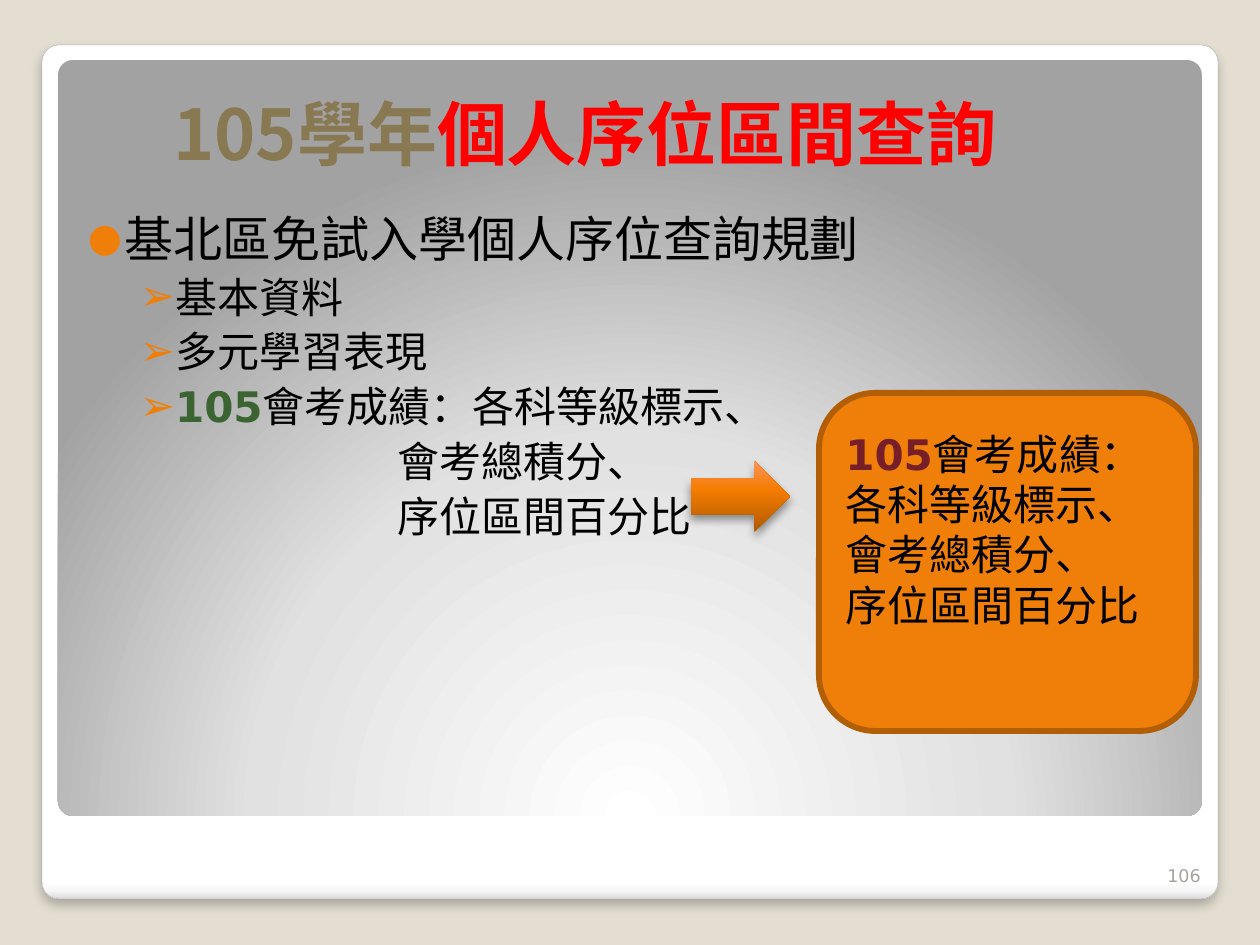
from dataclasses import dataclass

from lxml.etree import SubElement
from pptx import Presentation
from pptx.dml.color import RGBColor
from pptx.enum.shapes import MSO_SHAPE
from pptx.enum.text import MSO_ANCHOR, PP_ALIGN
from pptx.oxml.ns import qn
from pptx.util import Emu, Pt

PX = 914400 / 126


@dataclass(frozen=True)
class Theme:
    backdrop: str = "E3DED1"
    accent: str = "F07F09"
    accent_edge: str = "B25E07"
    card_edge: str = "A4A4A4"
    title: str = "887952"
    alert: str = "FF0000"
    text: str = "000000"
    green: str = "3B6432"
    maroon: str = "771F28"
    page: str = "A8A49B"
    title_size: int = 40
    topic_size: int = 28
    item_size: int = 24
    page_size: int = 10
    title_font: str = "Noto Sans CJK SC"
    body_font: str = "DejaVu Sans"


theme = Theme()


def add_panel(preset, box, stops=(), angle=None, shadow=None):
    """Add a borderless shape; a gradient without an angle is radial.

    shadow is (opacity %, blur pt, distance pt).
    """
    shape = slide.shapes.add_shape(preset, *[Emu(round(v * PX)) for v in box])
    shape.shadow.inherit = False
    shape.line.fill.background()
    shape.fill.background()
    props = shape._element.spPr
    if stops:
        gradient = props.makeelement(qn("a:gradFill"), {"rotWithShape": "1"})
        stop_list = SubElement(gradient, qn("a:gsLst"))
        for position, color in stops:
            stop = SubElement(stop_list, qn("a:gs"), pos=str(position * 1000))
            SubElement(stop, qn("a:srgbClr"), val=color)
        if angle is None:
            radial = SubElement(gradient, qn("a:path"), {"path": "circle"})
            SubElement(radial, qn("a:fillToRect"),
                       l="50000", t="175000", r="50000", b="-75000")
        else:
            SubElement(gradient, qn("a:lin"), ang=str(angle * 60000), scaled="0")
        props.replace(props.find(qn("a:noFill")), gradient)
    if shadow:
        opacity, blur, distance = shadow
        outer = SubElement(props.find(qn("a:effectLst")), qn("a:outerShdw"),
                           blurRad=str(Pt(blur)), dist=str(Pt(distance)),
                           dir="5400000", rotWithShape="0")
        color = SubElement(outer, qn("a:srgbClr"), val="000000")
        SubElement(color, qn("a:alpha"), val=str(opacity * 1000))
    return shape


def add_text(box, paragraphs, font, anchor=MSO_ANCHOR.TOP, align=PP_ALIGN.LEFT,
             before=0):
    """Each paragraph is (left px, hanging px, bullet, bullet %, size, runs)."""
    frame = slide.shapes.add_textbox(*[Emu(round(v * PX)) for v in box]).text_frame
    frame.word_wrap = True
    frame.vertical_anchor = anchor
    for index, (left, hang, bullet, scale, size, runs) in enumerate(paragraphs):
        paragraph = frame.add_paragraph() if index else frame.paragraphs[0]
        paragraph.alignment = align
        paragraph.space_before = Pt(before)
        props = paragraph._p.get_or_add_pPr()
        props.set("marL", str(round(left * PX)))
        props.set("indent", str(round(-hang * PX)))
        if bullet:
            color = SubElement(props, qn("a:buClr"))
            SubElement(color, qn("a:srgbClr"), val=theme.accent)
            SubElement(props, qn("a:buSzPct"), val=str(scale * 1000))
            SubElement(props, qn("a:buFont"), typeface=theme.body_font)
            SubElement(props, qn("a:buChar"), char=bullet)
        for words, color, bold in runs:
            run = paragraph.add_run()
            run.text = words
            run.font.size = Pt(size)
            run.font.bold = bold
            run.font.color.rgb = RGBColor.from_string(color)
            run.font.name = font
            SubElement(run._r.get_or_add_rPr(), qn("a:ea"),
                       typeface=theme.title_font)
    return frame


presentation = Presentation()
presentation.slide_width = Emu(round(1260 * PX))
presentation.slide_height = Emu(round(945 * PX))
slide = presentation.slides.add_slide(presentation.slide_layouts[6])
slide.background.fill.solid()
slide.background.fill.fore_color.rgb = RGBColor.from_string(theme.backdrop)

# Framed backdrop
card = add_panel(MSO_SHAPE.ROUNDED_RECTANGLE, (42, 45, 1176, 854),
                 [(0, "FFFFFF"), (98, "FFFFFF"), (99, "F7F7F7"), (100, "DADADA")],
                 angle=90, shadow=(25, 6, 4))
card.line.color.rgb = RGBColor.from_string(theme.card_edge)
card.line.width = Pt(0.16)
glow = add_panel(MSO_SHAPE.ROUNDED_RECTANGLE, (58, 60, 1144, 756),
                 [(0, "FFFFFF"), (55, "E1E1E1"), (100, "A2A2A2")])
for panel in (card, glow):
    panel.adjustments[0] = 0.02

result_box = add_panel(MSO_SHAPE.ROUNDED_RECTANGLE, (819, 393, 377, 338))
result_box.fill.solid()
result_box.fill.fore_color.rgb = RGBColor.from_string(theme.accent)
result_box.line.color.rgb = RGBColor.from_string(theme.accent_edge)
result_box.line.width = Pt(3.35)

# Title and outline
add_text((161, 65, 1102, 116),
         [(0, 0, None, 0, theme.title_size,
           [("105學年", theme.title, True),
            ("個人序位區間查詢", theme.alert, True)])],
         theme.title_font, anchor=MSO_ANCHOR.BOTTOM)

scores = "會考成績："
subjects = "各科等級標示、"
totals = ["會考總積分、", "序位區間百分比"]

outline = [(37, 37, "●", 80, theme.topic_size,
            [("基北區免試入學個人序位查詢規劃", theme.text, False)])]
for runs in ([("基本資料", theme.text, False)],
             [("多元學習表現", theme.text, False)],
             [("105", theme.green, True), (scores + subjects, theme.text, False)]):
    outline.append((84, 32, "➢", 100, theme.item_size, runs))
for line in totals:
    outline.append((310, 0, None, 0, theme.item_size, [(line, theme.text, False)]))
outline_frame = add_text((63, 195, 1134, 649), outline, theme.body_font, before=2.5)
outline_frame.margin_left = Emu(round(25 * PX))
outline_frame.margin_top = Emu(round(13 * PX))

# Arrow to the result
add_panel(MSO_SHAPE.RIGHT_ARROW, (691, 461, 99, 71),
          [(0, "B05A00"), (60, "F47C00"), (100, "FF945C")],
          angle=270, shadow=(40, 5.2, 3))

result_lines = [[("105", theme.maroon, True), (scores, theme.text, False)]]
result_lines += [[(line, theme.text, False)] for line in [subjects, *totals]]
add_text((769, 422, 491, 217),
         [(64, 0, None, 0, theme.item_size, runs) for runs in result_lines],
         theme.body_font)

# Page number
add_text((1150, 842, 63, 50),
         [(0, 0, None, 0, theme.page_size, [("106", theme.page, False)])],
         theme.body_font, anchor=MSO_ANCHOR.BOTTOM, align=PP_ALIGN.RIGHT)

presentation.save("out.pptx")
